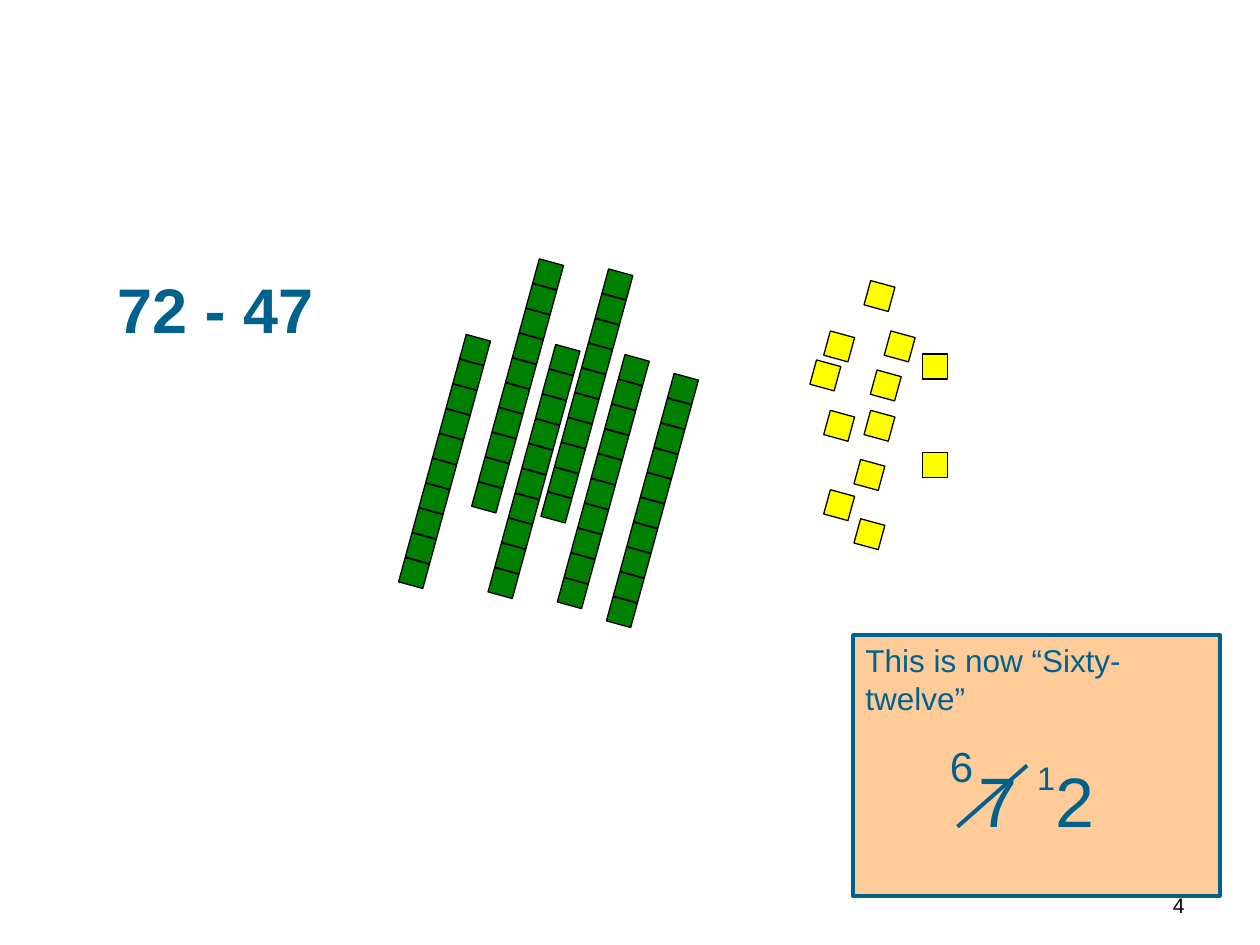
from math import cos, radians, sin

from lxml.etree import SubElement
from pptx import Presentation
from pptx.dml.color import RGBColor
from pptx.enum.shapes import MSO_CONNECTOR, MSO_SHAPE
from pptx.enum.text import MSO_ANCHOR, MSO_AUTO_SIZE, PP_ALIGN
from pptx.oxml.ns import qn
from pptx.util import Inches, Pt

COLORS = {
    "text": "00628C",
    "ten": "008000",
    "one": "FFFF00",
    "card": "FFCC99",
    "outline": "000000",
}
WIDTH, HEIGHT = Inches(10), Inches(7.5)
CELL = Inches(0.2)
TURN = 105.3
STEP_X, STEP_Y = 1.02 * cos(radians(TURN)), 1.02 * sin(radians(TURN))

TENS = [(8.1, 0.4), (6, 3.4), (2.45, 3), (5.35, 0), (10.7, 4.55), (8.75, 3.8)]
NEW_ONES = [
    (2.15, 0), (2.95, 2), (0, 3.15), (2.15, 5.15), (0.55, 2),
    (1.75, 7.1), (2.4, 3.55), (0.55, 5.15), (0.55, 8.3), (1.75, 9.45),
]
OLD_ONES = [(4.35, 2.8), (4.35, 6.7)]


def color(name):
    return RGBColor.from_string(COLORS[name])


def apply(target, formats):
    for name, value in formats.items():
        setattr(target, name, value)


def share(box, x, y, width, height):
    left, top, full_width, full_height = box
    return (
        round(left + x * full_width),
        round(top + y * full_height),
        round(width * full_width),
        round(height * full_height),
    )


def add_span(para, text, size, ink="text", **formats):
    span = para.add_run()
    span.text = text
    apply(span.font, {"name": "Arial", "size": Pt(size), **formats})
    span.font.color.rgb = color(ink)
    return span


def add_rectangle(shapes, box, fill, ink, weight):
    rectangle = shapes.add_shape(MSO_SHAPE.RECTANGLE, *box)
    rectangle.shadow.inherit = False
    rectangle.fill.solid()
    rectangle.fill.fore_color.rgb = color(fill)
    rectangle.line.color.rgb = color(ink)
    rectangle.line.width = Pt(weight)
    return rectangle


def add_block(shapes, box, column, row, fill, turn=TURN):
    place = (round(box[0] + column * CELL), round(box[1] + row * CELL), CELL, CELL)
    add_rectangle(shapes, place, fill, "outline", 0.75).rotation = turn


def add_problem(page, box):
    title = page.shapes.title
    apply(title, dict(zip(("left", "top", "width", "height"), box)))
    apply(title.text_frame, {
        "word_wrap": True,
        "auto_size": MSO_AUTO_SIZE.SHAPE_TO_FIT_TEXT,
        "vertical_anchor": MSO_ANCHOR.TOP,
    })
    para = title.text_frame.paragraphs[0]
    para.alignment = PP_ALIGN.LEFT
    add_span(para, "72 - 47", 36, bold=True)


def add_tens(page, box):
    for column, row in TENS:
        rod = page.shapes.add_group_shape()
        for index in range(10):
            add_block(rod.shapes, box, column + index * STEP_X,
                      row + index * STEP_Y, "ten")


def add_ones(page, box):
    for spots, turn in ((NEW_ONES, TURN), (OLD_ONES, 0)):
        for column, row in spots:
            add_block(page.shapes, box, column, row, "one", turn)


def add_label(shapes, box, text, size, ink, anchor, alignment):
    label = shapes.add_textbox(*box)
    apply(label.text_frame, {"word_wrap": True, "vertical_anchor": anchor})
    para = label.text_frame.paragraphs[0]
    para.alignment = alignment
    add_span(para, text, size, ink)


def add_regrouping_card(page, box):
    shapes = page.shapes.add_group_shape().shapes
    card = add_rectangle(shapes, box, "card", "text", 2.25)
    frame = card.text_frame
    apply(frame, {"word_wrap": True, "vertical_anchor": MSO_ANCHOR.TOP})
    sentence, number = frame.paragraphs[0], frame.add_paragraph()
    sentence.alignment = PP_ALIGN.LEFT
    apply(number, {"alignment": PP_ALIGN.CENTER, "space_before": Pt(23)})
    add_span(sentence, "This is now “Sixty-twelve”", 18)
    add_span(number, "7 ", 40)
    carried = add_span(number, "1", 32)
    carried.font._element.set("baseline", "66000")
    add_span(number, "2", 40)

    left, top, width, height = share(box, 0.285, 0.5, 0.19, 0.235)
    strike = shapes.add_connector(
        MSO_CONNECTOR.STRAIGHT, left + width, top, left, top + height)
    strike.line.color.rgb = color("text")
    strike.line.width = Pt(2.25)
    SubElement(strike._element.spPr, qn("a:effectLst"))
    add_label(shapes, share(box, 0.23, 0.38, 0.16, 0.24), "6", 24, "text",
              MSO_ANCHOR.TOP, PP_ALIGN.LEFT)


def add_page_number(page, box):
    add_label(page.shapes, box, "4", 12, "outline",
              MSO_ANCHOR.BOTTOM, PP_ALIGN.RIGHT)


def main():
    deck = Presentation()
    apply(deck, {"slide_width": WIDTH, "slide_height": HEIGHT})
    page = deck.slides.add_slide(deck.slide_layouts[5])
    whole = (0, 0, WIDTH, HEIGHT)
    regions = [
        (add_problem, (0.083, 0.28, 0.22, 0.09)),
        (add_tens, (0.318, 0.277, 0.24, 0.39)),
        (add_ones, (0.645, 0.3, 0.11, 0.28)),
        (add_regrouping_card, (0.677, 0.672, 0.291, 0.276)),
        (add_page_number, (0.717, 0.911, 0.233, 0.067)),
    ]
    for add_region, shares in regions:
        add_region(page, share(whole, *shares))
    deck.save("out.pptx")


if __name__ == "__main__":
    main()
